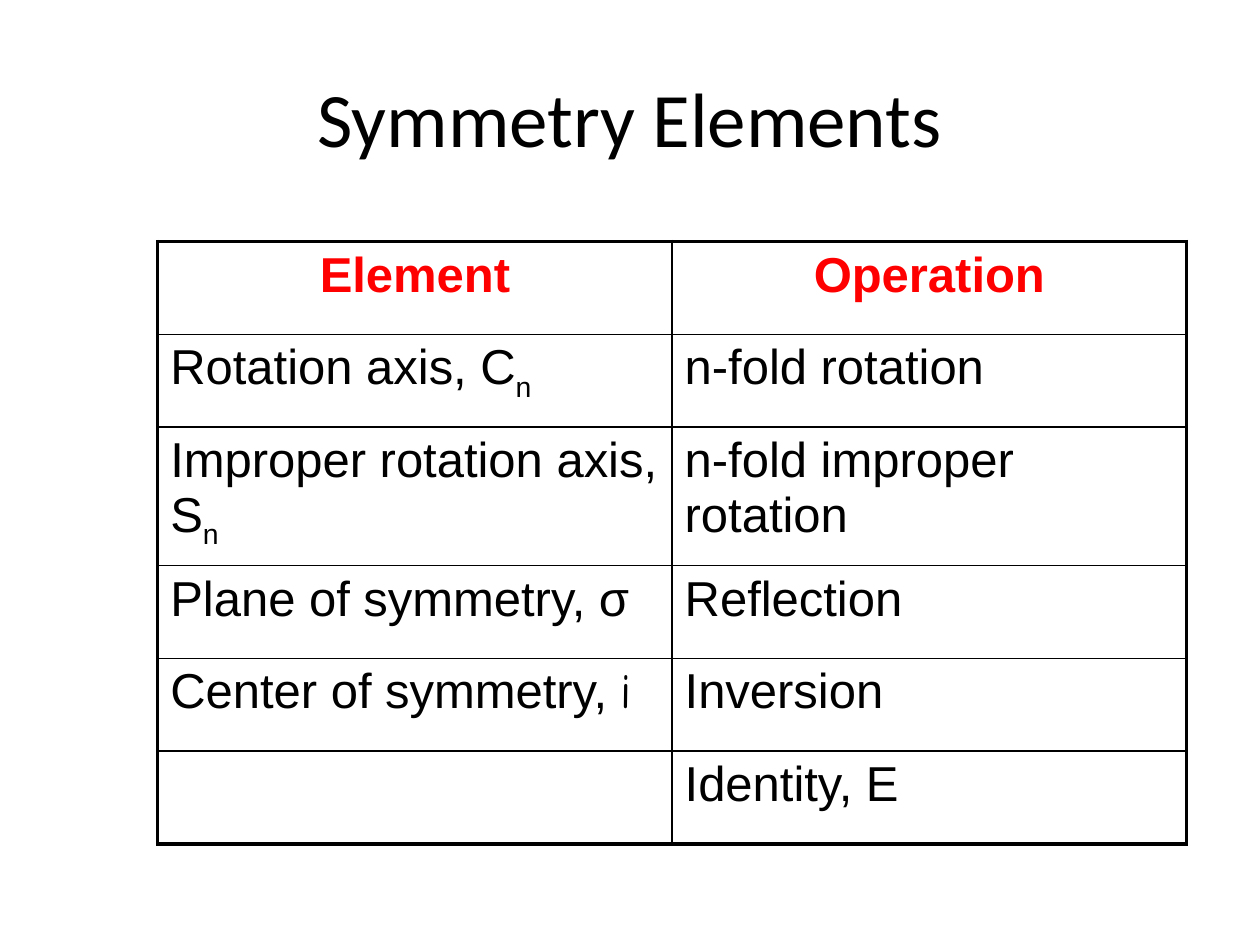
"""Build the slide that lists symmetry elements and their operations."""
from dataclasses import dataclass

from lxml.etree import SubElement
from pptx import Presentation
from pptx.dml.color import RGBColor
from pptx.enum.text import MSO_ANCHOR, PP_ALIGN
from pptx.oxml.ns import qn
from pptx.slide import Slide
from pptx.table import _Cell
from pptx.util import Cm, Pt

BLACK = RGBColor(0, 0, 0)
RED = RGBColor(255, 0, 0)
THIN, THICK = Pt(1), Pt(2.25)
WIDTH, HEIGHT, TALL = Cm(10.37), Cm(1.87), Cm(2.62)


@dataclass(frozen=True)
class Entry:
    """Hold a cell's text, with an optional subscript or symbol after it."""
    text: str = ""
    sub: str = ""
    sign: str = ""


@dataclass(frozen=True)
class Pair:
    """Hold one table row."""
    element: Entry
    action: Entry
    height: int = HEIGHT


PAIRS = [
    Pair(Entry("Element"), Entry("Operation")),
    Pair(Entry("Rotation axis, C", sub="n"), Entry("n-fold rotation")),
    Pair(Entry("Improper rotation axis, S", sub="n"),
         Entry("n-fold improper rotation"), TALL),
    Pair(Entry("Plane of symmetry, σ"), Entry("Reflection")),
    Pair(Entry("Center of symmetry, ", sign="i"), Entry("Inversion")),
    Pair(Entry(), Entry("Identity, E")),
]


def add_title(slide: Slide, text: str) -> None:
    """Add the centred title."""
    box = slide.shapes.add_textbox(Cm(1.27), Cm(0.76), Cm(22.86), Cm(3.18))
    frame = box.text_frame
    frame.word_wrap = True
    frame.vertical_anchor = MSO_ANCHOR.MIDDLE
    frame.text = text
    line = frame.paragraphs[0]
    line.alignment = PP_ALIGN.CENTER
    font = line.runs[0].font
    font.name, font.size, font.color.rgb = "Calibri", Pt(44), BLACK


def set_edge(cell: _Cell, side: str, width: int) -> None:
    """Draw one black border of a cell."""
    edge = SubElement(cell._tc.get_or_add_tcPr(), qn(f"a:ln{side}"), w=str(width))
    fill = SubElement(edge, qn("a:solidFill"))
    SubElement(fill, qn("a:srgbClr"), val=str(BLACK))


def fill_cell(cell: _Cell, entry: Entry, head: bool) -> None:
    """Write and format the text of a cell."""
    cell.fill.background()
    if not entry.text:
        return
    cell.text_frame.text = entry.text
    line = cell.text_frame.paragraphs[0]
    line.alignment = PP_ALIGN.CENTER if head else PP_ALIGN.LEFT
    space = SubElement(line._p.get_or_add_pPr(), qn("a:spcBef"))
    SubElement(space, qn("a:spcPct"), val="20000")
    if entry.sub or entry.sign:
        line.add_run().text = entry.sub or entry.sign
    for run in line.runs:
        font = run.font
        font.name, font.size, font.bold = "Arial", Pt(28), head
        font.color.rgb = RED if head else BLACK
    last = line.runs[-1].font
    if entry.sub:
        last._element.set("baseline", "-25000")
    if entry.sign:
        last.name = "Comic Neue"


def add_grid(slide: Slide, pairs: list[Pair]) -> None:
    """Add the table with a thick frame and thin inner lines."""
    total = sum(pair.height for pair in pairs)
    grid = slide.shapes.add_table(
        len(pairs), 2, Cm(3.18), Cm(4.87), 2 * WIDTH, total).table
    grid.first_row = grid.horz_banding = False
    for col in grid.columns:
        col.width = WIDTH
    end = len(pairs) - 1
    for row, pair in enumerate(pairs):
        grid.rows[row].height = pair.height
        for col, entry in enumerate((pair.element, pair.action)):
            cell = grid.cell(row, col)
            outer = {"L": col == 0, "R": col == 1, "T": row == 0, "B": row == end}
            for side, thick in outer.items():
                set_edge(cell, side, THICK if thick else THIN)
            fill_cell(cell, entry, row == 0)


def main() -> None:
    """Build and save the slide."""
    deck = Presentation()
    deck.slide_width, deck.slide_height = Cm(25.4), Cm(19.05)
    slide = deck.slides.add_slide(deck.slide_layouts[6])
    add_title(slide, "Symmetry Elements")
    add_grid(slide, PAIRS)
    deck.save("out.pptx")


if __name__ == "__main__":
    main()
